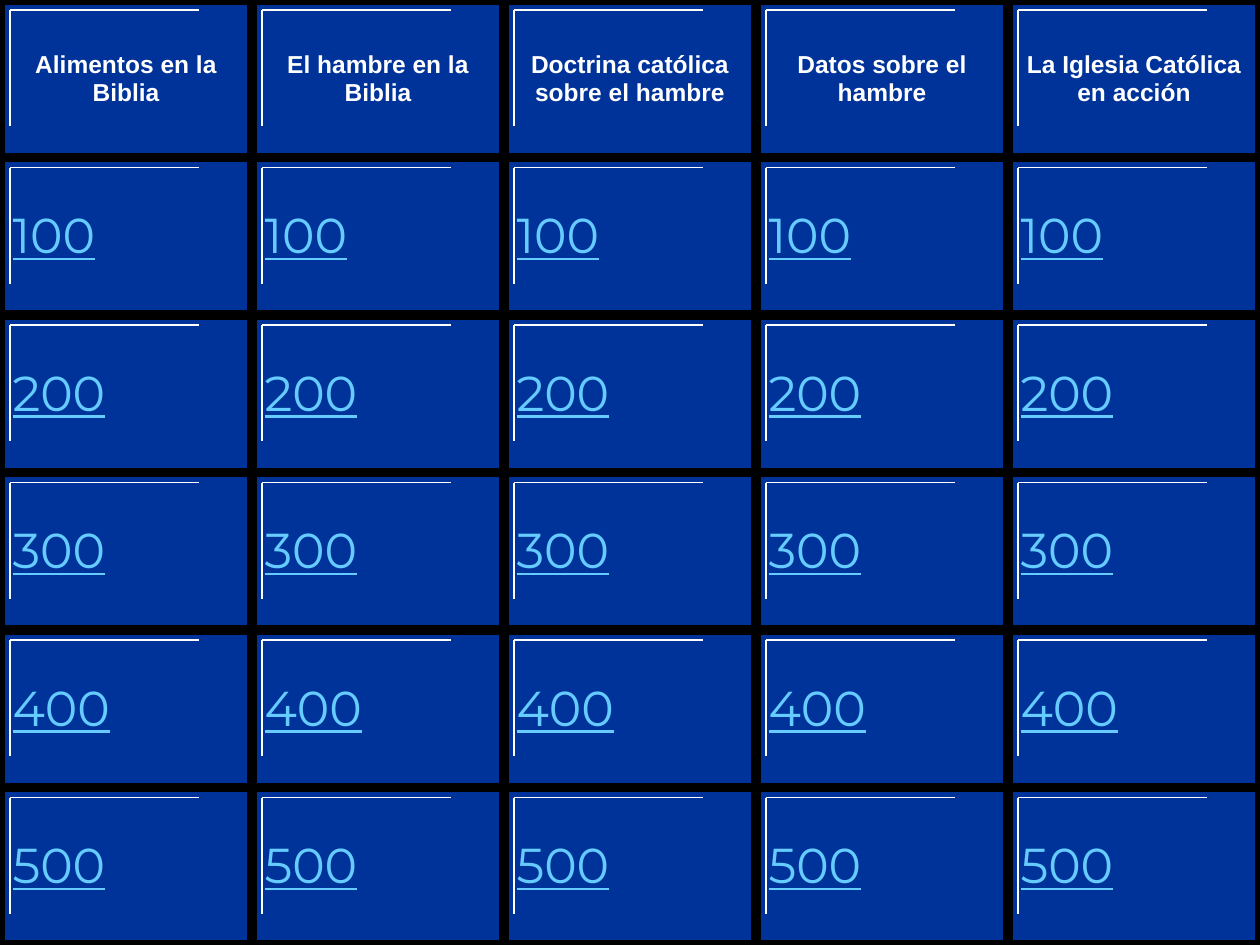
from dataclasses import dataclass
from itertools import product

from lxml import etree
from pptx import Presentation
from pptx.dml.color import RGBColor
from pptx.enum.shapes import MSO_CONNECTOR
from pptx.enum.text import MSO_ANCHOR, PP_ALIGN
from pptx.oxml.ns import qn
from pptx.util import Inches, Pt

STRAIGHT = MSO_CONNECTOR.STRAIGHT
MIDDLE = MSO_ANCHOR.MIDDLE
LEFT, CENTER = PP_ALIGN.LEFT, PP_ALIGN.CENTER

COLORS = {
    "background": "000000",
    "cell": "003399",
    "heading": "FFFFFF",
    "points": "66CCFF",
    "corner": "FFFFFF",
}

SLIDE_WIDTH, SLIDE_HEIGHT = 10, 7.5
CATEGORIES = [
    "Alimentos en la Biblia",
    "El hambre en la Biblia",
    "Doctrina católica sobre el hambre",
    "Datos sobre el hambre",
    "La Iglesia Católica en acción",
]
POINTS = [100, 200, 300, 400, 500]
COLUMN_COUNT, ROW_COUNT = len(CATEGORIES), len(POINTS) + 1
COLUMN_WIDTH, ROW_HEIGHT = SLIDE_WIDTH / COLUMN_COUNT, SLIDE_HEIGHT / ROW_COUNT
BORDER_WIDTH = 6
CORNER_INSET, CORNER_WIDTH, CORNER_HEIGHT = 0.08, 1.5, 0.92


@dataclass(frozen=True)
class TextStyle:
    font: str
    size: int
    color: str
    align: PP_ALIGN
    bold: bool = False
    underline: bool = False


HEADING_STYLE = TextStyle("Arial", 14, "heading", CENTER, bold=True)
POINTS_STYLE = TextStyle("Montserrat", 28, "points", LEFT, underline=True)


def color(name: str) -> RGBColor:
    return RGBColor.from_string(COLORS[name])


def set_borders(cell) -> None:
    properties = cell._tc.get_or_add_tcPr()
    for index, side in enumerate(("lnL", "lnR", "lnT", "lnB")):
        border = etree.Element(qn(f"a:{side}"), w=str(Pt(BORDER_WIDTH)))
        fill = etree.SubElement(border, qn("a:solidFill"))
        etree.SubElement(fill, qn("a:srgbClr"), val=COLORS["background"])
        properties.insert(index, border)


def fill_cell(cell, text: str, style: TextStyle) -> None:
    cell.fill.solid()
    cell.fill.fore_color.rgb = color("cell")
    cell.vertical_anchor = MIDDLE
    set_borders(cell)
    paragraph = cell.text_frame.paragraphs[0]
    paragraph.alignment = style.align
    run = paragraph.add_run()
    run.text = text
    run.font.name = style.font
    run.font.size = Pt(style.size)
    run.font.bold = style.bold
    run.font.underline = style.underline
    run.font.color.rgb = color(style.color)


def add_board(slide) -> None:
    table = slide.shapes.add_table(
        ROW_COUNT, COLUMN_COUNT, 0, 0, Inches(SLIDE_WIDTH), Inches(SLIDE_HEIGHT)
    ).table
    for column, category in enumerate(CATEGORIES):
        fill_cell(table.cell(0, column), category, HEADING_STYLE)
        for row, points in enumerate(POINTS, start=1):
            fill_cell(table.cell(row, column), str(points), POINTS_STYLE)


def add_line(slide, left: float, top: float, right: float, bottom: float) -> None:
    line = slide.shapes.add_connector(
        STRAIGHT, Inches(left), Inches(top), Inches(right), Inches(bottom)
    )
    line.line.color.rgb = color("corner")
    line.line.width = Pt(0.75)
    etree.SubElement(line._element.spPr, qn("a:effectLst"))


def add_corner(slide, row: int, column: int) -> None:
    """Draw the highlight along the left and top edges of one cell."""
    left = column * COLUMN_WIDTH + CORNER_INSET
    top = row * ROW_HEIGHT + CORNER_INSET
    add_line(slide, left, top, left, top + CORNER_HEIGHT)
    add_line(slide, left + CORNER_WIDTH, top, left, top)


def main() -> None:
    presentation = Presentation()
    presentation.slide_width = Inches(SLIDE_WIDTH)
    presentation.slide_height = Inches(SLIDE_HEIGHT)
    slide = presentation.slides.add_slide(presentation.slide_layouts[6])
    slide.background.fill.solid()
    slide.background.fill.fore_color.rgb = color("background")
    add_board(slide)
    for row, column in product(range(ROW_COUNT), range(COLUMN_COUNT)):
        add_corner(slide, row, column)
    presentation.save("out.pptx")


if __name__ == "__main__":
    main()
